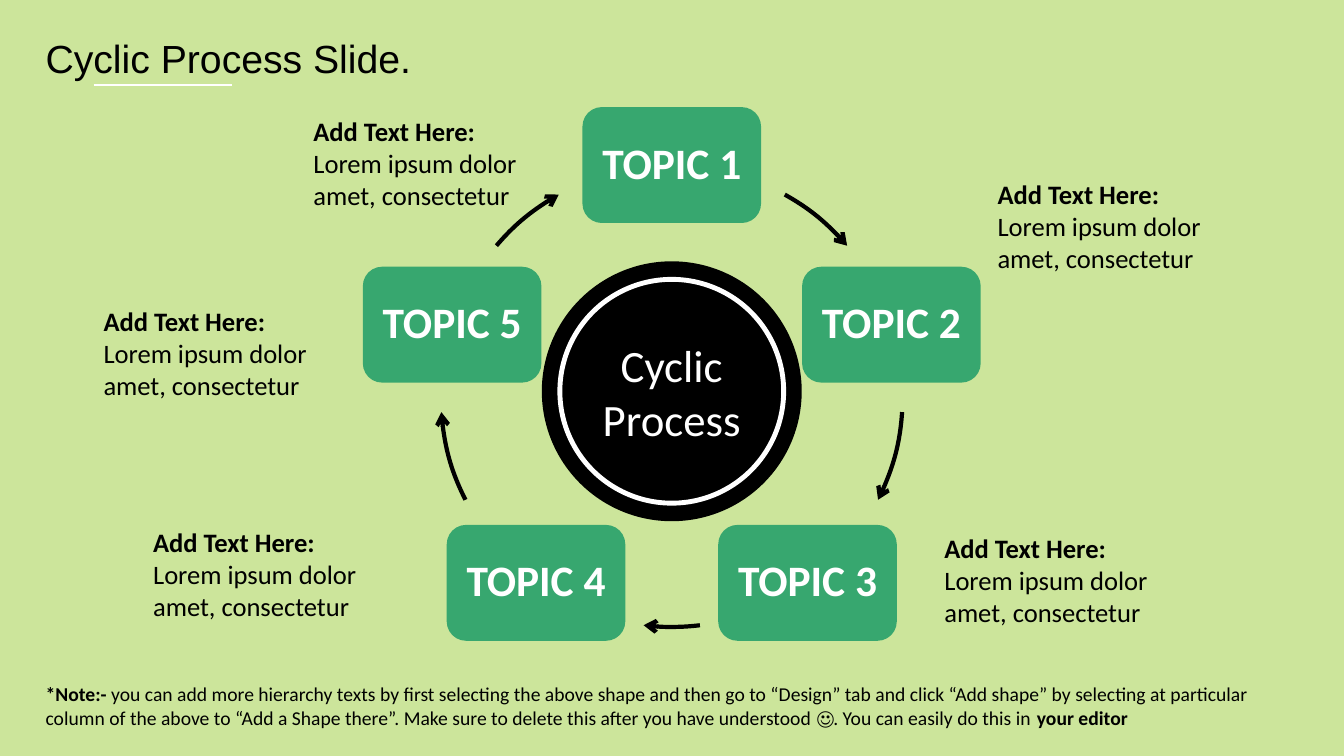
import math
from lxml import etree
from pptx import Presentation, util as u
from pptx.dml.color import RGBColor
from pptx.enum import shapes, text
from pptx.oxml.ns import qn

BACKGROUND, GREEN, BLACK, WHITE = "CCE59B", "37A76F", "000000", "FFFFFF"
TITLE = "Cyclic Process Slide."
HUB = ["Cyclic", "Process"]
TOPICS = ["TOPIC 1", "TOPIC 2", "TOPIC 3", "TOPIC 4", "TOPIC 5"]
ARROW_ANGLES = [(299.3, 319.4), (4, 26.7), (83, 97), (153.3, 176), (220.6, 240.7)]
CAPTION = ("Add Text Here:", "Lorem ipsum dolor amet, consectetur")
CAPTION_SPOTS = [(7.65, 2.77), (24.89, 4.37), (23.55, 13.28), (3.61, 13.13), (2.36, 7.57)]
NOTE = [
    ("*Note:- ", True),
    ("you can add more hierarchy texts by first selecting the above shape and then go to "
     "“Design” tab and click “Add shape” by selecting at particular column of the above to "
     "“Add a Shape there”. Make sure to delete this after you have understood ☺. "
     "You can easily do this in ", False),
    ("your editor", True),
]

CENTER_X, CENTER_Y, RADIUS = 16.93, 9.98, 5.82
TOPIC_WIDTH, TOPIC_HEIGHT = 4.5, 2.92
DISC, RING = 6.55, 5.64

presentation = Presentation()
presentation.slide_width, presentation.slide_height = u.Cm(33.87), u.Cm(19.05)
slide = presentation.slides.add_slide(presentation.slide_layouts[6])


def color(value):
    return RGBColor.from_string(value)


def write(shape, paragraphs, size, font="Calibri", fill=BLACK, align=None,
          anchor=text.MSO_ANCHOR.TOP, spacing=None, inset=None):
    frame = shape.text_frame
    frame.word_wrap = True
    frame.vertical_anchor = anchor
    if inset is not None:
        frame.margin_left = frame.margin_right = u.Cm(inset)
        frame.margin_top = frame.margin_bottom = u.Cm(inset)
    for index, runs in enumerate(paragraphs):
        paragraph = frame.add_paragraph() if index else frame.paragraphs[0]
        paragraph.alignment = align
        paragraph.line_spacing = spacing
        for words, bold in runs:
            run = paragraph.add_run()
            run.text = words
            run.font.size, run.font.name, run.font.bold = u.Pt(size), font, bold
            run.font.color.rgb = color(fill)


def add_box(left, top, width, height):
    return slide.shapes.add_textbox(u.Cm(left), u.Cm(top), u.Cm(width), u.Cm(height))


def add_centered(kind, x, y, width, height, fill=None, line=None, weight=1):
    shape = slide.shapes.add_shape(kind, u.Cm(x - width / 2), u.Cm(y - height / 2),
                                   u.Cm(width), u.Cm(height))
    shape.shadow.inherit = False
    if fill:
        shape.fill.solid()
        shape.fill.fore_color.rgb = color(fill)
    else:
        shape.fill.background()
    if line:
        shape.line.color.rgb = color(line)
        shape.line.width = u.Pt(weight)
    else:
        shape.line.fill.background()
    return shape


slide.background.fill.solid()
slide.background.fill.fore_color.rgb = color(BACKGROUND)

middle = {"align": text.PP_ALIGN.CENTER, "anchor": text.MSO_ANCHOR.MIDDLE}
preset = shapes.MSO_SHAPE

for index, (topic, (start, end)) in enumerate(zip(TOPICS, ARROW_ANGLES)):
    angle = math.radians(index * 360 / len(TOPICS) - 90)
    topic_box = add_centered(preset.ROUNDED_RECTANGLE, CENTER_X + RADIUS * math.cos(angle),
                             CENTER_Y + RADIUS * math.sin(angle),
                             TOPIC_WIDTH, TOPIC_HEIGHT, fill=GREEN)
    write(topic_box, [[(topic, True)]], 31, fill=WHITE, spacing=0.9, inset=0.33, **middle)

    arrow = add_centered(preset.ARC, CENTER_X, CENTER_Y, 2 * RADIUS, 2 * RADIUS,
                         line=BLACK, weight=3)
    arrow.adjustments[0], arrow.adjustments[1] = start * 0.6, end * 0.6
    etree.SubElement(arrow.line._get_or_add_ln(), qn("a:tailEnd"), type="arrow")

add_centered(preset.OVAL, CENTER_X, CENTER_Y - 0.12, DISC, DISC, fill=BLACK)
ring = add_centered(preset.OVAL, CENTER_X, CENTER_Y - 0.12, RING, RING, line=WHITE, weight=3.5)
write(ring, [[(word, False)] for word in HUB], 32, fill=WHITE, **middle)

write(add_box(0.9, 17.07, 32.15, 1.45), [NOTE], 14)
write(add_box(0.9, 0.73, 12.1, 1.45), [[(TITLE, False)]], 28, font="Arial")

underline = slide.shapes.add_connector(shapes.MSO_CONNECTOR.STRAIGHT,
                                       u.Cm(2.36), u.Cm(2.14), u.Cm(5.84), u.Cm(2.14))
underline.line.color.rgb = color(WHITE)
underline.line.width = u.Pt(1.5)
etree.SubElement(underline._element.spPr, qn("a:effectLst"))

heading, body = CAPTION
for left, top in CAPTION_SPOTS:
    write(add_box(left, top, 6.15, 2.7), [[(heading, True)], [(body, False)]], 19)

presentation.save("out.pptx")
